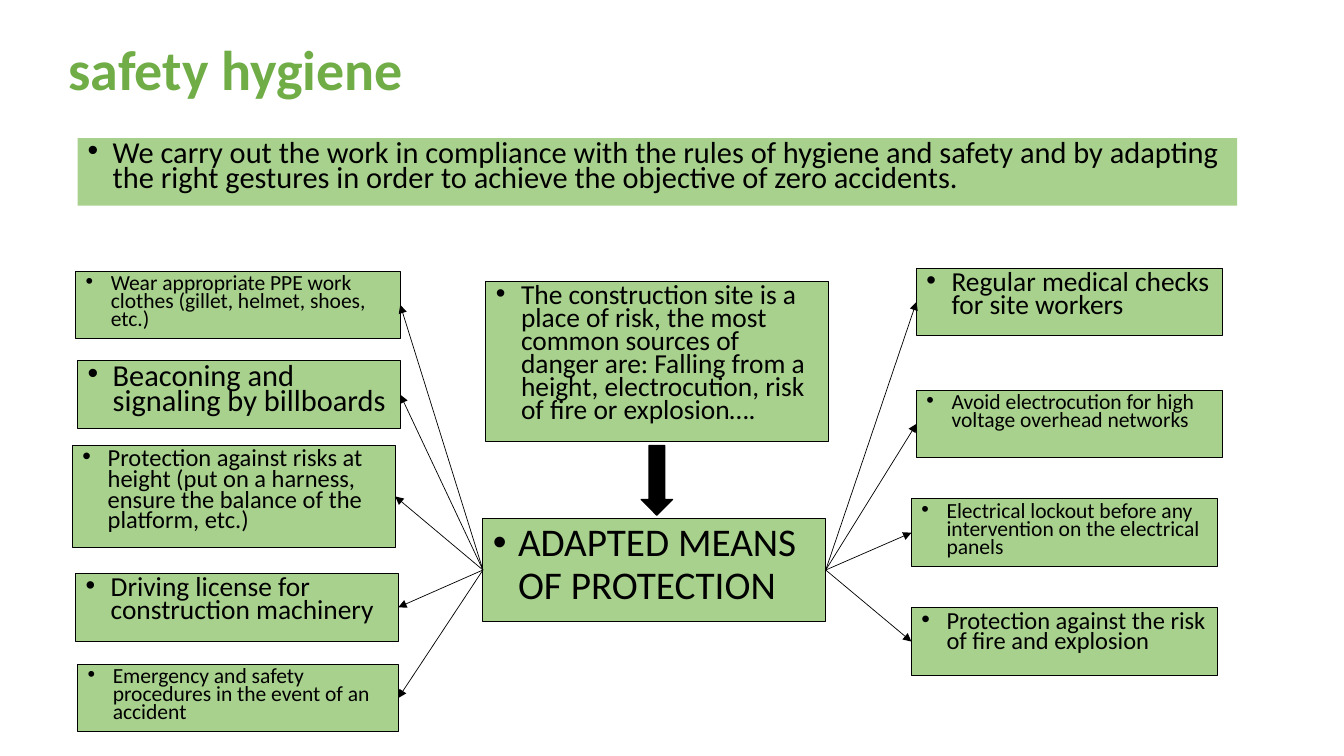
from pptx import Presentation
from pptx.dml.color import RGBColor
from pptx.enum.shapes import MSO_CONNECTOR as Conn, MSO_SHAPE as Shape
from pptx.enum.text import MSO_ANCHOR as Anchor, MSO_AUTO_SIZE as Fit, PP_ALIGN as Align
from pptx.oxml.ns import qn
from pptx.util import Pt
from lxml.etree import SubElement

PX = 9144
GREEN, PALE, BLACK = "70AD47", "A9D18E", "000000"
LEFT_SIDE, RIGHT_SIDE = 1, 3

BANNER = ("We carry out the work in compliance with the rules of hygiene and safety and by adapting "
          "the right gestures in order to achieve the objective of zero accidents.")
RISKS = ("The construction site is a place of risk, the most common sources of danger are: "
         "Falling from a height, electrocution, risk of fire or explosion….")
MEANS = "ADAPTED MEANS OF PROTECTION"
LEFT = [
    ("Wear appropriate PPE work clothes (gillet, helmet, shoes, etc.)", 15.4, (3, 0, 322, 67)),
    ("Beaconing and signaling by billboards", 21.7, (5, 89, 320, 67)),
    ("Protection against risks at height (put on a harness, ensure the balance of the platform, etc.)",
     17.5, (0, 173, 320, 101)),
    ("Driving license for construction machinery", 19.6, (3, 300, 320, 67)),
    ("Emergency and safety procedures in the event of an accident", 15.4, (5, 390, 318, 67)),
]
RIGHT = [
    ("Regular medical checks for site workers", 19.6, (5, 0, 304, 67)),
    ("Avoid electrocution for high voltage overhead networks", 15.4, (5, 121, 304, 67)),
    ("Electrical lockout before any intervention on the electrical panels", 15.4, (0, 229, 304, 67)),
    ("Protection against the risk of fire and explosion", 17.5, (0, 337, 304, 67)),
]


def px(*sizes):
    return [size * PX for size in sizes]


def color(code):
    return RGBColor.from_string(code)


def write(shape, text, size, ink=BLACK, bold=False, anchor=Anchor.TOP, gap=0.7, before=10, bullet=True):
    frame = shape.text_frame
    frame.word_wrap, frame.auto_size = True, Fit.NONE
    frame.vertical_anchor = anchor
    para = frame.paragraphs[0]
    para.alignment, para.line_spacing, para.space_before = Align.LEFT, gap, Pt(before)
    run = para.add_run()
    run.text = text
    font = run.font
    font.name, font.size, font.bold = "Calibri", Pt(size), bold
    font.color.rgb = color(ink)
    if bullet:
        props = para._p.get_or_add_pPr()
        props.set("marL", str(25 * PX))
        props.set("indent", str(-25 * PX))
        SubElement(props, qn("a:buFont")).set("typeface", "Arial")
        SubElement(props, qn("a:buChar")).set("char", "•")


def draw(slide, box, kind=Shape.RECTANGLE, fill=PALE, line=0.75):
    shape = slide.shapes.add_shape(kind, *px(*box))
    shape.shadow.inherit = False
    shape.fill.solid()
    shape.fill.fore_color.rgb = color(fill)
    if line:
        shape.line.color.rgb = color(BLACK)
        shape.line.width = Pt(line)
    else:
        shape.line.fill.background()
    return shape


def card(slide, box, text, size, line=0.75, gap=0.7):
    shape = draw(slide, box, line=line)
    write(shape, text, size, gap=gap)
    return shape


def link(slide, start, out, end, into):
    wire = slide.shapes.add_connector(Conn.STRAIGHT, 0, 0, 0, 0)
    wire.begin_connect(start, out)
    wire.end_connect(end, into)
    wire.line.color.rgb = color(BLACK)
    wire.line.width = Pt(0.5)
    SubElement(wire.line._get_or_add_ln(), qn("a:tailEnd")).set("type", "triangle")
    SubElement(wire._element.spPr, qn("a:effectLst"))


def header(slide, box):
    x, y, w, h = box
    title = slide.shapes.title
    title.left, title.top, title.width, title.height = px(x, y, w, 145)
    write(title, "safety hygiene", 40, ink=GREEN, bold=True, anchor=Anchor.MIDDLE,
          gap=0.9, before=0, bullet=False)
    card(slide, (x + 19, y + h - 67, w, 67), BANNER, 21.7, line=0)


def center(slide, box):
    x, y, w, h = box
    card(slide, (x + 3, y, w - 3, 159), RISKS, 19.6)
    draw(slide, (x + 157, y + 163, 31, 69), Shape.DOWN_ARROW, fill=BLACK, line=1)
    return card(slide, (x, y + h - 103, w - 3, 103), MEANS, 28, gap=0.9)


def column(slide, spot, cards, hub, out, into):
    x, y = spot
    for text, size, (dx, dy, w, h) in cards:
        item = card(slide, (x + dx, y + dy, w, h), text, size)
        link(slide, hub, out, item, into)


def main():
    deck = Presentation()
    deck.slide_width, deck.slide_height = px(1333, 750)
    slide = deck.slides.add_slide(deck.slide_layouts[5])
    header(slide, (58, -1, 1150, 205))
    hub = center(slide, (479, 279, 343, 338))
    column(slide, (72, 269), LEFT, hub, LEFT_SIDE, RIGHT_SIDE)
    column(slide, (904, 266), RIGHT, hub, RIGHT_SIDE, LEFT_SIDE)
    deck.save("out.pptx")


if __name__ == "__main__":
    main()
